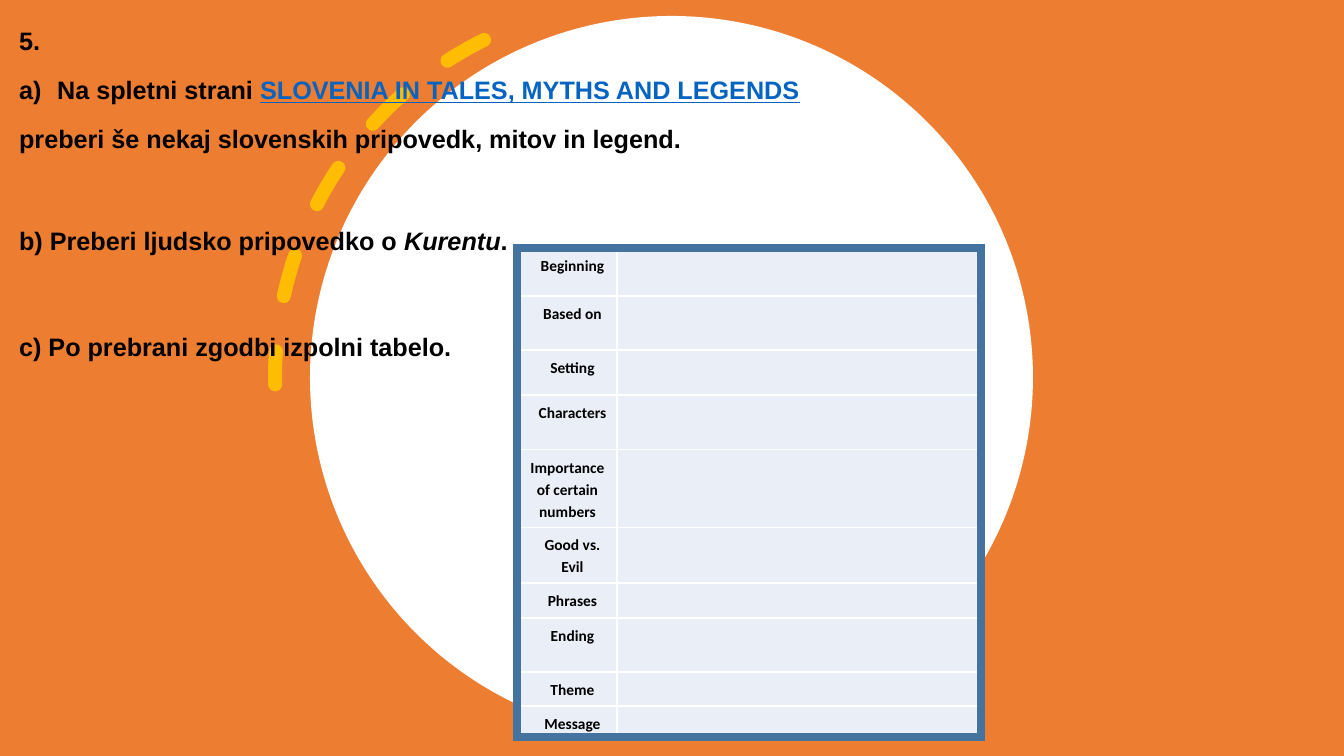
import lxml.etree
import pptx
import pptx.dml.color
import pptx.enum.shapes
import pptx.enum.text
import pptx.oxml.ns
import pptx.util

THEME = {
    "orange": "ED7D31", "white": "FFFFFF", "gold": "FFC000",
    "frame": "43739E", "cell": "EAEFF7", "text": "000000", "link": "0563C1",
    "body_font": "Arial", "body_size": 18,
    "table_font": "Calibri", "table_size": 11,
}
EMU_PER_PX = 914400 / 100.8


def px(*lengths):
    return [round(length * EMU_PER_PX) for length in lengths]


def add_element(parent, tag, **attributes):
    return lxml.etree.SubElement(parent, pptx.oxml.ns.qn(tag), attributes)


color = pptx.dml.color.RGBColor.from_string
shape_type = pptx.enum.shapes.MSO_SHAPE
alignment = pptx.enum.text.PP_ALIGN

presentation = pptx.Presentation()
presentation.slide_width, presentation.slide_height = px(1344, 756)
slide = presentation.slides.add_slide(presentation.slide_layouts[1])
slide.shapes.title.element.getparent().remove(slide.shapes.title.element)
body = slide.placeholders[1]

for kind, box, fill in [
    (shape_type.RECTANGLE, (0, 0, 1344, 756), "orange"),
    (shape_type.OVAL, (310, 16, 723, 723), "white"),
]:
    shape = slide.shapes.add_shape(kind, *px(*box))
    shape.shadow.inherit = False
    shape.fill.solid()
    shape.fill.fore_color.rgb = color(THEME[fill])
    shape.line.fill.background()

arc = slide.shapes.add_shape(shape_type.ARC, *px(275, 1, 751, 751))
arc.shadow.inherit = False
arc.adjustments[0] = 162
arc.adjustments[1] = 200.93
arc.rotation = 153.7
arc.element.spPr.find(pptx.oxml.ns.qn("a:xfrm")).set("flipV", "1")
arc.fill.background()
arc.line.color.rgb = color(THEME["gold"])
arc.line.width = pptx.util.Pt(10)
arc.line.dash_style = pptx.enum.dml.MSO_LINE.DASH
arc_line = arc.element.spPr.find(pptx.oxml.ns.qn("a:ln"))
arc_line.set("cap", "rnd")
add_element(arc_line.find(".//" + pptx.oxml.ns.qn("a:srgbClr")), "a:alpha", val="95000")

arc.element.addnext(body.element)
body.left, body.top, body.width, body.height = px(9, 16, 1312, 566)
text_frame = body.text_frame
text_frame.word_wrap = True
text_frame.auto_size = pptx.enum.text.MSO_AUTO_SIZE.NONE
text_frame.vertical_anchor = pptx.enum.text.MSO_ANCHOR.TOP

instructions = [
    (["5."], None, 10),
    (["Na spletni strani ", "SLOVENIA IN TALES, MYTHS AND LEGENDS"], "alphaLcParenR", 10),
    (["preberi še nekaj slovenskih pripovedk, mitov in legend."], None, 48),
    (["b) Preberi ljudsko pripovedko o ", "Kurentu", "."], None, 51),
    (["c) Po prebrani zgodbi izpolni tabelo."], None, 0),
]
for index, (pieces, numbering, space_after) in enumerate(instructions):
    paragraph = text_frame.paragraphs[0] if index == 0 else text_frame.add_paragraph()
    properties = paragraph._p.get_or_add_pPr()
    hanging = px(38)[0] if numbering else 0
    properties.set("marL", str(hanging))
    properties.set("indent", str(-hanging))
    if numbering:
        add_element(properties, "a:buFont", typeface=THEME["body_font"])
        add_element(properties, "a:buAutoNum", type=numbering)
    else:
        add_element(properties, "a:buNone")
    paragraph.alignment = alignment.JUSTIFY
    paragraph.line_spacing = 1.15
    paragraph.space_before = pptx.util.Pt(0)
    paragraph.space_after = pptx.util.Pt(space_after)
    for piece in pieces:
        run = paragraph.add_run()
        run.text = piece
        run.font.name = THEME["body_font"]
        run.font.size = pptx.util.Pt(THEME["body_size"])
        run.font.bold = True
        run.font.italic = piece == "Kurentu"
        is_link = piece.startswith("SLOVENIA")
        run.font.underline = is_link
        run.font.color.rgb = color(THEME["link" if is_link else "text"])

story_rows = [
    ("Beginning", 48), ("Based on", 54), ("Setting", 45), ("Characters", 55),
    ("Importance of certain numbers", 76), ("Good vs. Evil", 55),
    ("Phrases", 35), ("Ending", 54), ("Theme", 34), ("Message", 33),
]
table_height = sum(height for label, height in story_rows)
table = slide.shapes.add_table(len(story_rows), 2, *px(518, 248, 464, table_height)).table
table.first_row = False
table.horz_banding = False
for column, width in zip(table.columns, px(99, 365)):
    column.width = width

for row, (label, height) in zip(table.rows, story_rows):
    row.height = px(height)[0]
    for cell, text in zip(row.cells, (label, "")):
        cell.margin_left, cell.margin_right, cell.margin_top, cell.margin_bottom = px(6, 6, 6, 6)
        for side in ("a:lnL", "a:lnR", "a:lnT", "a:lnB"):
            border = add_element(cell._tc.get_or_add_tcPr(), side, w="12700")
            add_element(add_element(border, "a:solidFill"), "a:srgbClr", val=THEME["white"])
        cell.fill.solid()
        cell.fill.fore_color.rgb = color(THEME["cell"])
        paragraph = cell.text_frame.paragraphs[0]
        if not text:
            add_element(paragraph._p, "a:endParaRPr", sz=str(THEME["table_size"] * 100))
            continue
        paragraph.text = text
        indent = 0 if text.startswith("Importance") else 10
        paragraph._p.get_or_add_pPr().set("marL", str(px(indent)[0]))
        paragraph.alignment = alignment.CENTER
        paragraph.line_spacing = 1.15
        font = paragraph.runs[0].font
        font.name = THEME["table_font"]
        font.size = pptx.util.Pt(THEME["table_size"])
        font.bold = True
        font.color.rgb = color(THEME["text"])

frame = slide.shapes.add_shape(shape_type.RECTANGLE, *px(517, 248, 464, table_height))
frame.shadow.inherit = False
frame.fill.background()
frame.line.color.rgb = color(THEME["frame"])
frame.line.width = pptx.util.Pt(6)
add_element(frame.element.spPr.find(pptx.oxml.ns.qn("a:ln")), "a:miter", lim="800000")

presentation.save("out.pptx")
